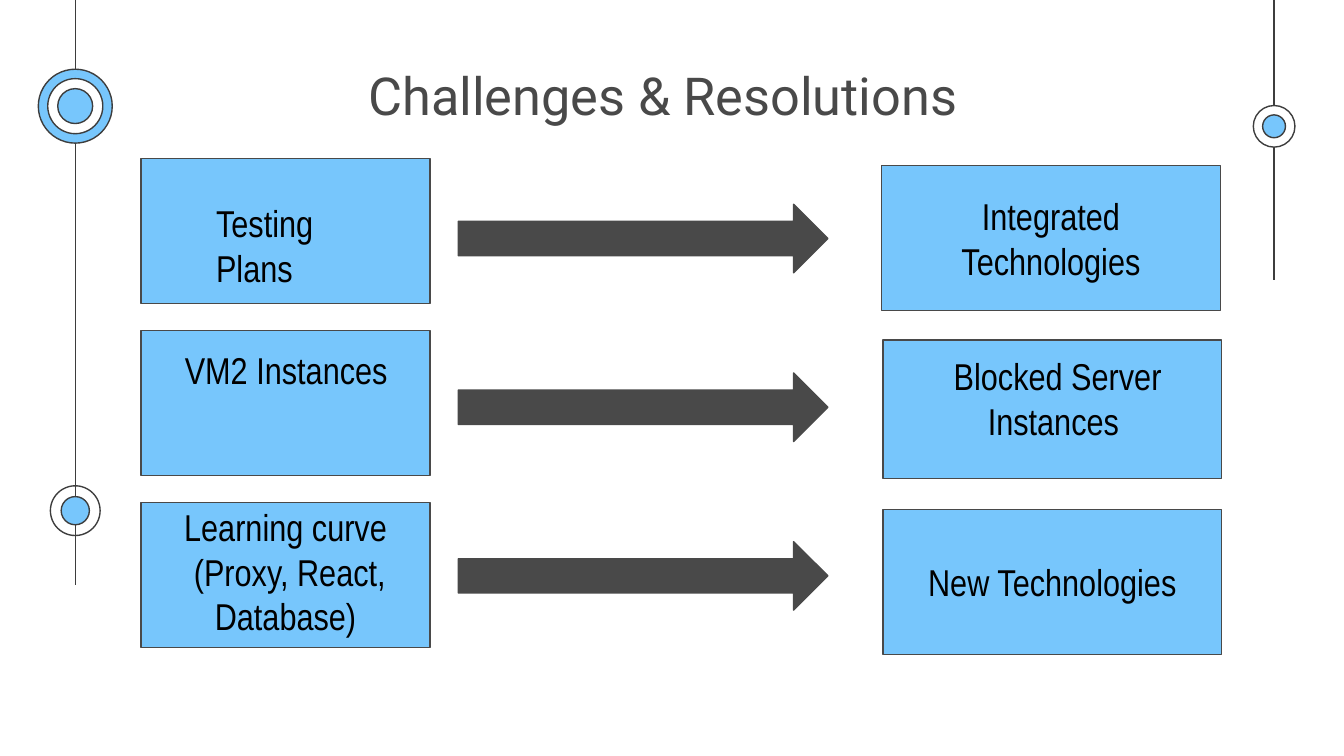
from dataclasses import dataclass

from lxml import etree
from pptx import Presentation
from pptx.dml.color import RGBColor
from pptx.enum import shapes, text
from pptx.oxml.ns import qn
from pptx.util import Inches, Pt


@dataclass(frozen=True)
class Theme:
    blue: RGBColor = RGBColor(0x77, 0xC6, 0xFC)
    white: RGBColor = RGBColor(0xFF, 0xFF, 0xFF)
    gray: RGBColor = RGBColor(0x49, 0x49, 0x49)
    rail: RGBColor = RGBColor(0x3D, 0x3D, 0x3D)
    black: RGBColor = RGBColor(0, 0, 0)
    title_font: str = "Roboto"
    body_font: str = "Arial Narrow"
    title_size: int = 28
    body_size: int = 20
    stroke: float = 0.75


T = Theme()
KIND = shapes.MSO_SHAPE
LEFT, CENTER = text.PP_ALIGN.LEFT, text.PP_ALIGN.CENTER
TOP, MIDDLE = text.MSO_ANCHOR.TOP, text.MSO_ANCHOR.MIDDLE


def add_shape(s, kind, box, fill, line):
    sp = s.shapes.add_shape(kind, *map(Inches, box))
    sp.shadow.inherit = False
    if fill is None:
        sp.fill.background()
    else:
        sp.fill.solid()
        sp.fill.fore_color.rgb = fill
    sp.line.color.rgb = line
    sp.line.width = Pt(T.stroke)
    return sp


def write(sp, lines, font, size, color, align=CENTER, anchor=TOP):
    tf = sp.text_frame
    tf.word_wrap = True
    tf.auto_size = text.MSO_AUTO_SIZE.NONE
    tf.vertical_anchor = anchor
    tf.margin_left = tf.margin_right = Inches(0.1)
    tf.margin_top = tf.margin_bottom = Inches(0.1)
    for i, line in enumerate(lines):
        p = tf.paragraphs[0] if i == 0 else tf.add_paragraph()
        p.alignment = align
        r = p.add_run()
        r.text = line
        r.font.name, r.font.size = font, Pt(size)
        r.font.color.rgb = color


def write_body(sp, lines, **options):
    write(sp, lines, T.body_font, T.body_size, T.black, **options)


def add_label(s, box, lines, align=CENTER):
    write_body(s.shapes.add_textbox(*map(Inches, box)), lines, align=align)


def add_rail(s, x, length, targets):
    """Vertical line from the top edge, with concentric rings along it."""
    cx = s.shapes.add_connector(shapes.MSO_CONNECTOR.STRAIGHT,
                                Inches(x), 0, Inches(x), Inches(length))
    cx.line.color.rgb = T.rail
    cx.line.width = Pt(T.stroke)
    etree.SubElement(cx._element.spPr, qn("a:effectLst"))
    for y, rings in targets:
        for d, fill in rings:
            add_shape(s, KIND.OVAL, (x - d / 2, y - d / 2, d, d), fill, T.rail)


def add_title(s, box):
    sp = s.shapes.title
    sp.left, sp.top, sp.width, sp.height = map(Inches, box)
    write(sp, ["Challenges & Resolutions"], T.title_font, T.title_size, T.gray)


def add_challenges(s, x, y):
    """Left column; each label is offset from its own box."""
    pitch = 1.28
    rows = [
        ((0.46, 0.21, 1.23, 0.66), ["Testing Plans"], LEFT),
        ((0.2, 0.02, 1.76, 0.81), ["VM2 Instances"], CENTER),
        ((-0.07, -0.09, 2.29, 0.81),
         ["Learning curve", " (Proxy, React, Database)"], CENTER),
    ]
    for i, ((dx, dy, w, h), lines, align) in enumerate(rows):
        top = y + i * pitch
        add_shape(s, KIND.RECTANGLE, (x, top, 2.15, 1.08), T.blue, T.gray)
        add_label(s, (x + dx, top + dy, w, h), lines, align)


def add_arrows(s, x, y):
    for i in range(3):
        add_shape(s, KIND.RIGHT_ARROW, (x, y + i * 1.255, 2.75, 0.51),
                  T.gray, T.gray)


def add_resolutions(s, x, y):
    """Right column; the middle label sits at the top of its box."""
    w = 2.52
    for dx, dy, name in [(0, 0, "Integrated Technologies"),
                         (0.01, 2.56, "New Technologies")]:
        sp = add_shape(s, KIND.RECTANGLE, (x + dx, y + dy, w, 1.08),
                       T.blue, T.gray)
        write_body(sp, [name], anchor=MIDDLE)
    add_shape(s, KIND.RECTANGLE, (x + 0.01, y + 1.3, w, 1.03), T.blue, T.gray)
    add_label(s, (x + 0.05, y + 1.3, w, 1.03), ["Blocked Server Instances "])


def main():
    prs = Presentation()
    prs.slide_width = Inches(10)
    prs.slide_height = prs.slide_width * 9 // 16
    s = prs.slides.add_slide(prs.slide_layouts[5])

    # Decorative rails
    add_rail(s, 0.56, 4.35, [
        (0.79, [(0.55, T.blue), (0.41, T.white), (0.26, T.blue)]),
        (3.8, [(0.37, None), (0.21, T.blue)]),
    ])
    add_rail(s, 9.48, 2.08, [(0.94, [(0.31, T.white), (0.17, T.blue)])])

    # Content
    add_title(s, (1.88, 0.37, 6.1, 0.65))
    add_challenges(s, 1.05, 1.18)
    add_arrows(s, 3.41, 1.52)
    add_resolutions(s, 6.56, 1.23)
    prs.save("out.pptx")


if __name__ == "__main__":
    main()
